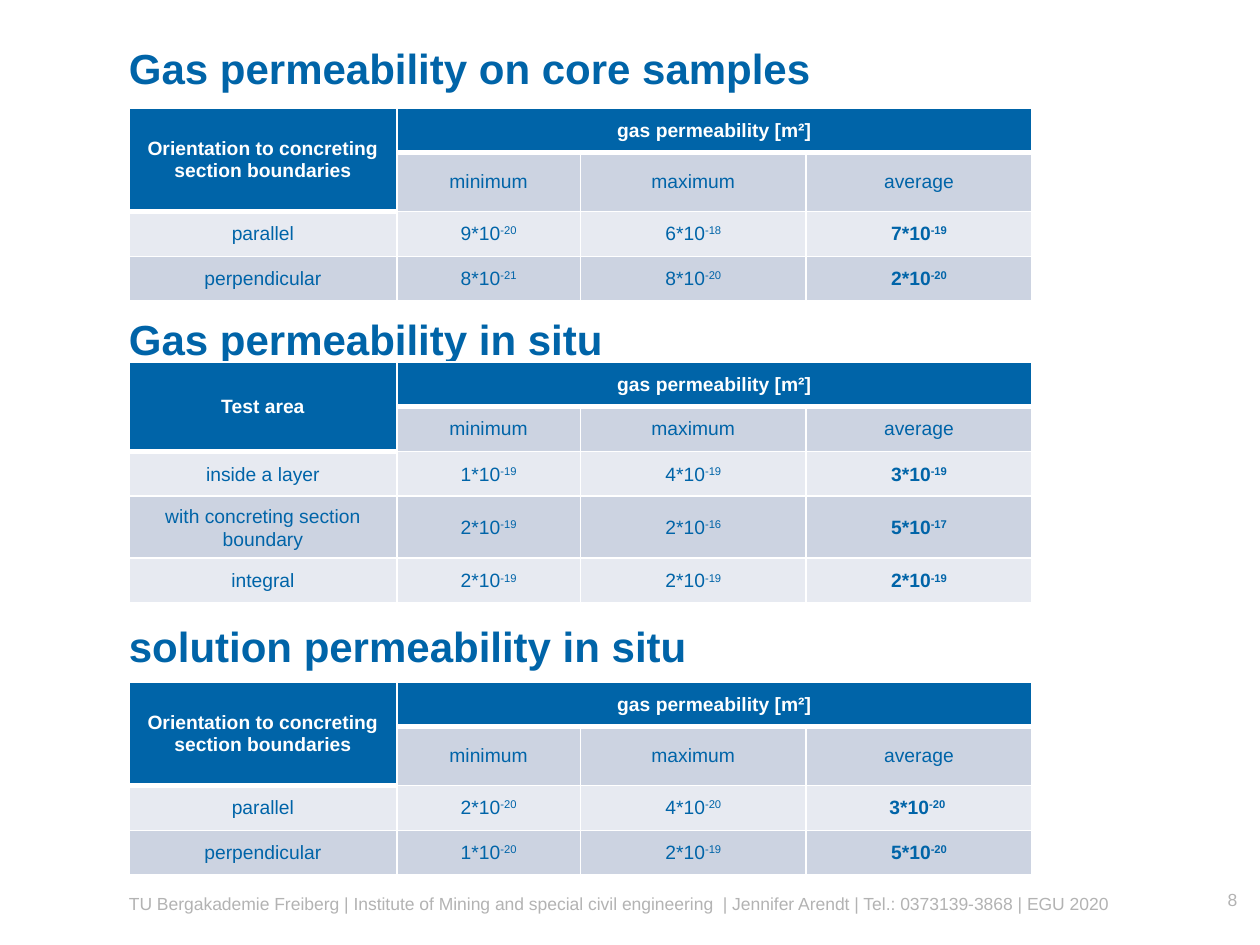
"""Build the slide of gas and solution permeability tables."""
from lxml.etree import SubElement
from pptx import Presentation
from pptx.dml.color import RGBColor
from pptx.enum.text import MSO_ANCHOR, PP_ALIGN
from pptx.oxml.ns import qn
from pptx.util import Cm, Pt

HEAD = "gas permeability [m²]"
SUBS = ["minimum", "maximum", "average"]
SIDE = "Orientation to concreting section boundaries"
PARTS = [
    {"title": "Gas permeability on core samples", "box": (0.5, 1.75),
     "top": 2.18, "sub": 0.75, "lead": 1.0, "side": SIDE, "rows": [
         ["parallel", "9*10^‑20", "6*10^‑18", "7*10^‑19"],
         ["perpendicular", "8*10^‑21", "8*10^‑20", "2*10^‑20"]]},
    {"title": "Gas permeability in situ", "box": (5.95, 1.75),
     "top": 7.3, "sub": 0.9, "lead": 1.07, "side": "Test area", "rows": [
         ["inside a layer", "1*10^-19", "4*10^-19", "3*10^‑19"],
         ["with concreting section boundary", "2*10^-19", "2*10^-16", "5*10^‑17"],
         ["integral", "2*10^-19", "2*10^-19", "2*10^-19"]]},
    {"title": "solution permeability in situ", "box": (12.25, 1.52),
     "top": 13.75, "sub": 0.75, "lead": 1.0, "side": SIDE, "rows": [
         ["parallel", "2*10^‑20", "4*10^‑20", "3*10^‑20 "],
         ["perpendicular", "1*10^‑20", "2*10^‑19", "5*10^‑20"]]},
]
FOOT = ("TU Bergakademie Freiberg | Institute of Mining and special civil engineering"
        "  | Jennifer Arendt | Tel.: 0373139-3868 | EGU 2020")
PAGE = "8"

THEME = {
    "font": "Arial", "blue": "0064A8", "white": "FFFFFF", "gray": "B3B3B3",
    "bands": ["CCD3E1", "E7EAF1"], "title": 24, "cell": 11, "foot": 10,
}
LEFT, WIDE, ROW = 2.6, 20.3, 0.9
COLS = [5.4, 3.7, 4.55, 4.55]


def write(para, text, size, color, bold=False, align=PP_ALIGN.LEFT):
    """Fill a paragraph, raising whatever follows a caret."""
    para.alignment = align
    base, _, power = text.partition("^")
    look = {"name": THEME["font"], "size": Pt(size), "bold": bold}
    for part, lift in ((base, 0), (power, 30000)):
        if not part:
            continue
        run = para.add_run()
        run.text = part
        for key, val in look.items():
            setattr(run.font, key, val)
        run.font.color.rgb = RGBColor.from_string(THEME[color])
        if lift:
            run._r.get_or_add_rPr().set("baseline", str(lift))


def label(slide, place, text, anchor, *look):
    """Add a text box without margins."""
    frame = slide.shapes.add_textbox(*map(Cm, place)).text_frame
    form = {"word_wrap": True, "vertical_anchor": anchor, "margin_left": 0,
            "margin_right": 0, "margin_top": 0, "margin_bottom": 0}
    for key, val in form.items():
        setattr(frame, key, val)
    write(frame.paragraphs[0], text, *look)


def edge(cell, sides):
    """Draw white borders of the given point widths."""
    props = cell._tc.get_or_add_tcPr()
    for side, width in sides.items():
        line = SubElement(props, qn("a:ln" + side), w=str(Pt(width)))
        fill = SubElement(line, qn("a:solidFill"))
        SubElement(fill, qn("a:srgbClr"), val=THEME["white"])


def grid(slide, part):
    """Add one table with its merged head cells."""
    data = [[part["side"], HEAD, "", ""], ["", *SUBS], *part["rows"]]
    highs = [ROW, part["sub"]] + [ROW] * len(part["rows"])
    table = slide.shapes.add_table(
        len(data), len(COLS), Cm(LEFT), Cm(part["top"]),
        Cm(sum(COLS)), Cm(sum(highs))).table
    table.first_row = table.horz_banding = False
    for col, width in zip(table.columns, COLS):
        col.width = Cm(width)
    for row, high in zip(table.rows, highs):
        row.height = Cm(high)
    table.cell(0, 0).merge(table.cell(1, 0))
    table.cell(0, 1).merge(table.cell(0, 3))
    for r, line in enumerate(data):
        for c, text in enumerate(line):
            cell = table.cell(r, c)
            head = r == 0 or (r == 1 and c == 0)
            under = r == 1 or (r == 2 and c == 0)
            edge(cell, {"L": 1, "R": 1, "T": 3 if under else 1, "B": 3 if head else 1})
            tone = THEME["blue"] if head else THEME["bands"][(r + 1) % 2]
            cell.fill.solid()
            cell.fill.fore_color.rgb = RGBColor.from_string(tone)
            cell.vertical_anchor = MSO_ANCHOR.MIDDLE
            para = cell.text_frame.paragraphs[0]
            if r > 1:
                para.line_spacing = part["lead"]
            write(para, text, THEME["cell"], "white" if head else "blue",
                  head or (r > 1 and c == 3), PP_ALIGN.CENTER)


def main():
    """Lay out the slide and save it."""
    deck = Presentation()
    deck.slide_width, deck.slide_height = Cm(25.4), Cm(19.05)
    slide = deck.slides.add_slide(deck.slide_layouts[6])
    for part in PARTS:
        top, high = part["box"]
        label(slide, (LEFT, top, WIDE, high), part["title"], MSO_ANCHOR.MIDDLE,
              THEME["title"], "blue", True)
        grid(slide, part)
    label(slide, (LEFT, 18, WIDE, 0.6), FOOT, MSO_ANCHOR.TOP, THEME["foot"], "gray")
    label(slide, (22.9, 17.93, 2.04, 0.6), PAGE, MSO_ANCHOR.TOP,
          THEME["foot"], "gray", False, PP_ALIGN.RIGHT)
    deck.save("out.pptx")


if __name__ == "__main__":
    main()
